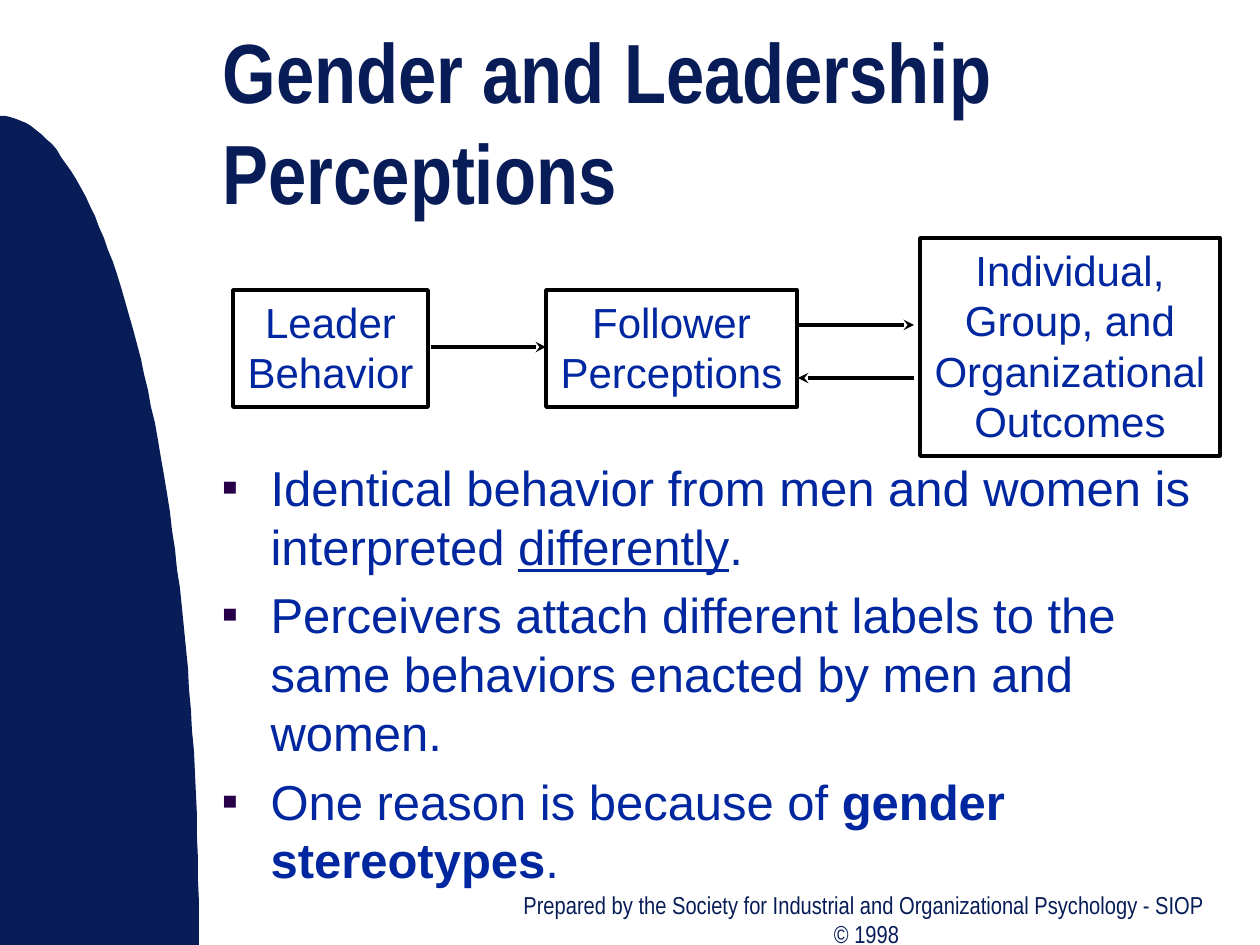
import math

import pptx
import pptx.dml.color
import pptx.enum.shapes
import pptx.enum.text
import pptx.oxml
import pptx.oxml.ns
import pptx.util

RGB = pptx.dml.color.RGBColor
NAVY = RGB(0x08, 0x1D, 0x58)
BLUE = RGB(0x00, 0x27, 0x9F)
BLACK = RGB(0x01, 0x00, 0x00)
BULLET = "280049"

SCALE = 914400 / 126  # EMU per px
PP_ALIGN = pptx.enum.text.PP_ALIGN
ANCHOR = pptx.enum.text.MSO_ANCHOR
AUTO_SIZE = pptx.enum.text.MSO_AUTO_SIZE
NSDECLS = pptx.oxml.ns.nsdecls("a")

TITLE_FONT = {"name": "Arial Narrow", "size": pptx.util.Pt(48), "bold": True}
BODY_FONT = {"name": "Arial", "size": pptx.util.Pt(28)}
BOX_FONT = {"name": "Arial", "size": pptx.util.Pt(24)}
FOOTER_FONT = {"name": "Arial Narrow", "size": pptx.util.Pt(14)}


def px(*values):
    return [pptx.util.Emu(round(v * SCALE)) for v in values]


def add_run(p, text, color, *formats):
    r = p.add_run()
    r.text = text
    for values in formats:
        for name, value in values.items():
            setattr(r.font, name, value)
    r.font.color.rgb = color


prs = pptx.Presentation()
prs.slide_width, prs.slide_height = px(1260, 945)
s = prs.slides.add_slide(prs.slide_layouts[1])

# Quarter ellipse at the left edge
STEPS = 60
angles = [math.pi / 2 * i / STEPS for i in range(STEPS + 1)]
arc = [(199 * math.sin(a), 945 - 829 * math.cos(a)) for a in angles]
fb = s.shapes.build_freeform(*arc[0], scale=SCALE)
fb.add_line_segments(arc[1:] + [(0, 945)], close=True)
sp = fb.convert_to_shape()
sp.shadow.inherit = False
sp.fill.solid()
sp.fill.fore_color.rgb = NAVY
sp.line.fill.background()

# Title
sp = s.shapes.title
sp.left, sp.top, sp.width, sp.height = px(210, 42, 1018, 157)
tf = sp.text_frame
tf.auto_size = AUTO_SIZE.NONE
tf.vertical_anchor = ANCHOR.MIDDLE
p = tf.paragraphs[0]
p.alignment = PP_ALIGN.LEFT
add_run(p, "Gender and Leadership Perceptions", NAVY, TITLE_FONT)

# Bulleted list
bullets = [
    [("Identical behavior from men and women is interpreted ", {}),
     ("differently", {"underline": True}), (".", {})],
    [("Perceivers attach different labels to the same behaviors "
      "enacted by men and women.", {})],
    [("One reason is because of ", {}),
     ("gender stereotypes", {"bold": True}), (".", {})],
]
sp = s.placeholders[1]
sp.left, sp.top, sp.width, sp.height = px(210, 451, 1040, 451)
tf = sp.text_frame
tf.auto_size = AUTO_SIZE.NONE
for i, runs in enumerate(bullets):
    p = tf.add_paragraph() if i else tf.paragraphs[0]
    for text, extra in runs:
        add_run(p, text, BLUE, BODY_FONT, extra)
    pPr = p._p.get_or_add_pPr()
    indent = px(48)[0]
    pPr.set("marL", str(indent))
    pPr.set("indent", str(-indent))
    for xml in (f'<a:buClr {NSDECLS}><a:srgbClr val="{BULLET}"/></a:buClr>',
                f'<a:buSzPct {NSDECLS} val="50000"/>',
                f'<a:buFont {NSDECLS} typeface="Arial"/>',
                f'<a:buChar {NSDECLS} char="■"/>'):
        pPr.append(pptx.oxml.parse_xml(xml))

# Boxes of the diagram
boxes = [
    ((233, 290, 195, 117), True, ["Leader", "Behavior"]),
    ((546, 290, 251, 117), False, ["Follower", "Perceptions"]),
    ((920, 238, 300, 218), False,
     ["Individual,", "Group, and", "Organizational", "Outcomes"]),
]
for place, wrap, lines in boxes:
    sp = s.shapes.add_shape(pptx.enum.shapes.MSO_SHAPE.RECTANGLE, *px(*place))
    sp.shadow.inherit = False
    sp.fill.background()
    sp.line.color.rgb = BLACK
    sp.line.width = pptx.util.Pt(2)
    tf = sp.text_frame
    tf.word_wrap = wrap
    tf.auto_size = AUTO_SIZE.SHAPE_TO_FIT_TEXT
    tf.vertical_anchor = ANCHOR.TOP
    for i, text in enumerate(lines):
        p = tf.add_paragraph() if i else tf.paragraphs[0]
        p.alignment = PP_ALIGN.CENTER
        add_run(p, text, BLUE, BOX_FONT)

# Arrows between the boxes
arrows = [(431, 546, 347, "tailEnd"), (798, 914, 325, "tailEnd"),
          (798, 914, 378, "headEnd")]
for x1, x2, y, end in arrows:
    sp = s.shapes.add_connector(pptx.enum.shapes.MSO_CONNECTOR.STRAIGHT,
                                *px(x1, y, x2, y))
    sp.line.color.rgb = BLACK
    sp.line.width = pptx.util.Pt(2)
    sp.line._get_or_add_ln().append(
        pptx.oxml.parse_xml(f'<a:{end} {NSDECLS} type="stealth"/>'))
    sp._element.spPr.append(pptx.oxml.parse_xml(f"<a:effectLst {NSDECLS}/>"))

# Footer
sp = s.shapes.add_textbox(*px(504, 903, 725, 32))
tf = sp.text_frame
tf.word_wrap = False
tf.vertical_anchor = ANCHOR.MIDDLE
p = tf.paragraphs[0]
p.alignment = PP_ALIGN.CENTER
add_run(p, "Prepared by the Society for Industrial and Organizational "
        "Psychology - SIOP  © 1998", NAVY, FOOTER_FONT)

prs.save("out.pptx")
